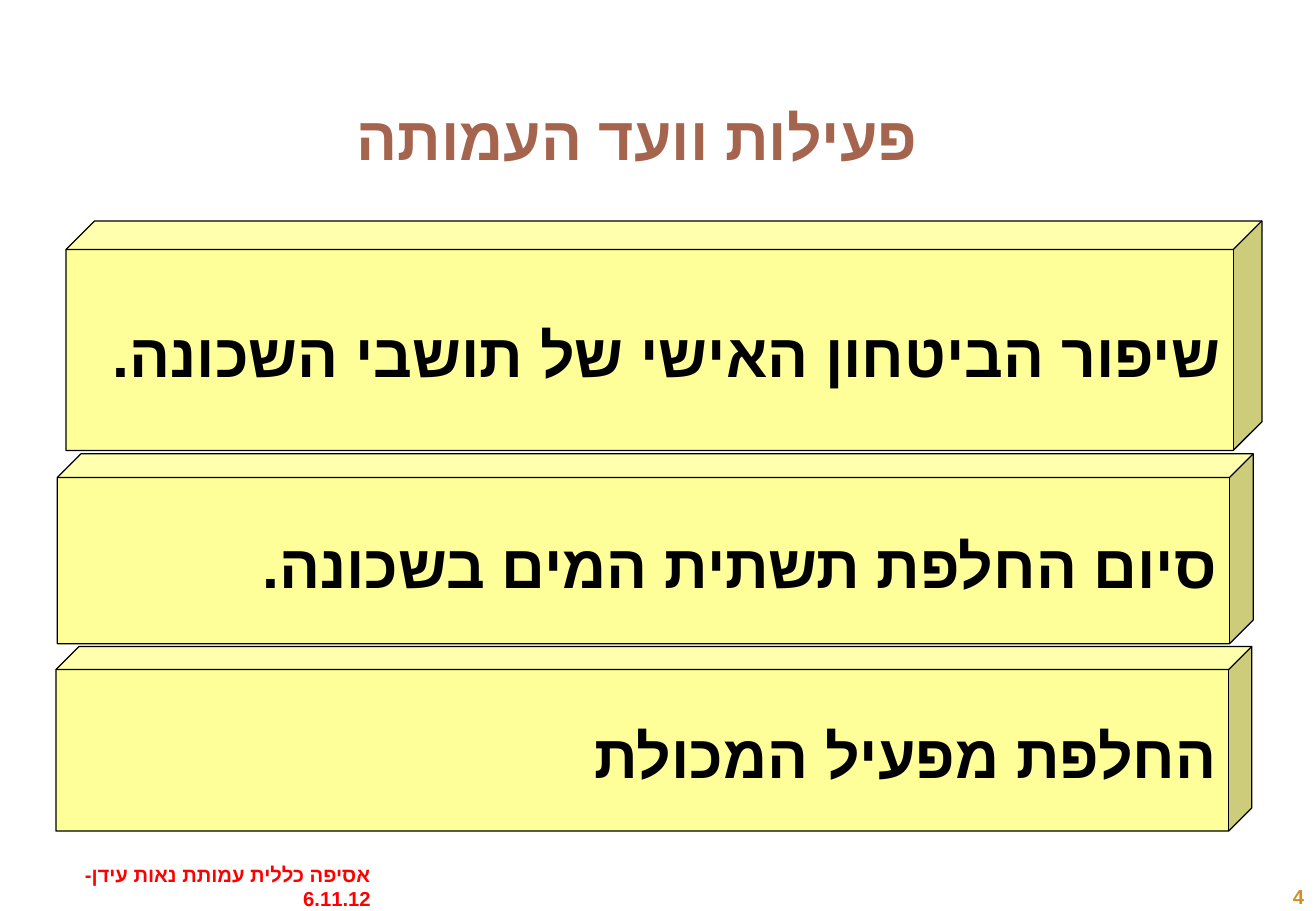
from pptx import Presentation
from pptx.dml.color import RGBColor
from pptx.enum.shapes import MSO_SHAPE
from pptx.enum.text import MSO_ANCHOR, PP_ALIGN
from pptx.oxml.ns import qn
from pptx.util import Cm, Pt
from lxml.etree import SubElement

BROWN = RGBColor(0xA5, 0x64, 0x4E)
YELLOW = RGBColor(0xFF, 0xFF, 0x99)
BLACK = RGBColor(0, 0, 0)
RED = RGBColor(0xFF, 0, 0)
ORANGE = RGBColor(0xD3, 0x8E, 0x27)


def write(tf, text, font, size, color, align=PP_ALIGN.RIGHT):
    tf.text = text
    p = tf.paragraphs[0]
    p.alignment = align
    p._p.get_or_add_pPr().set("rtl", "1")
    r = p.runs[0]
    r.font.name = font
    r.font.size = Pt(size)
    r.font.bold = True
    r.font.color.rgb = color
    SubElement(r._r.get_or_add_rPr(), qn("a:cs")).set("typeface", "Arial")
    return p


def add_title(s, left, top, width, height, text):
    title = s.shapes.title
    title.left, title.top, title.width, title.height = left, top, width, height
    tf = title.text_frame
    write(tf, text, "Times New Roman", 36, BROWN, PP_ALIGN.CENTER)
    tf.word_wrap = False
    tf.vertical_anchor = MSO_ANCHOR.MIDDLE


def add_block(s, left, top, width, height, text, font):
    cube = s.shapes.add_shape(MSO_SHAPE.CUBE, left, top, width, height)
    cube.adjustments[0] = 0.125
    cube.shadow.inherit = False
    cube.fill.solid()
    cube.fill.fore_color.rgb = YELLOW
    cube.line.color.rgb = BLACK
    cube.line.width = Pt(0.75)
    tf = cube.text_frame
    tf.word_wrap = True
    tf.vertical_anchor = MSO_ANCHOR.MIDDLE
    write(tf, text, font, 36, BLACK).line_spacing = 1.1


def add_note(s, left, top, width, height, text, color):
    tf = s.shapes.add_textbox(left, top, width, height).text_frame
    tf.word_wrap = True
    write(tf, text, "Lato", 12, color)


def main():
    prs = Presentation()
    prs.slide_width, prs.slide_height = Cm(27.51), Cm(19.05)
    s = prs.slides.add_slide(prs.slide_layouts[5])
    add_title(s, Cm(6.6), Cm(1.8), Cm(13.44), Cm(2.11), "פעילות וועד העמותה")
    blocks = [
        (1.38, 4.62, 4.8, "שיפור הביטחון האישי של תושבי השכונה.", "Arial"),
        (1.2, 9.49, 3.97, "סיום החלפת תשתית המים בשכונה.", "Times New Roman"),
        (1.17, 13.52, 3.86, "החלפת מפעיל המכולת", "Times New Roman"),
    ]
    for left, top, height, text, font in blocks:
        add_block(s, Cm(left), Cm(top), Cm(25), Cm(height), text, font)
    add_note(s, Cm(0.61), Cm(17.91), Cm(7.39), Cm(0.81),
             "אסיפה כללית עמותת נאות עידן- 6.11.12", RED)
    add_note(s, Cm(25.22), Cm(18.36), Cm(2.29), Cm(0.69), "4", ORANGE)
    prs.save("out.pptx")


if __name__ == "__main__":
    main()
